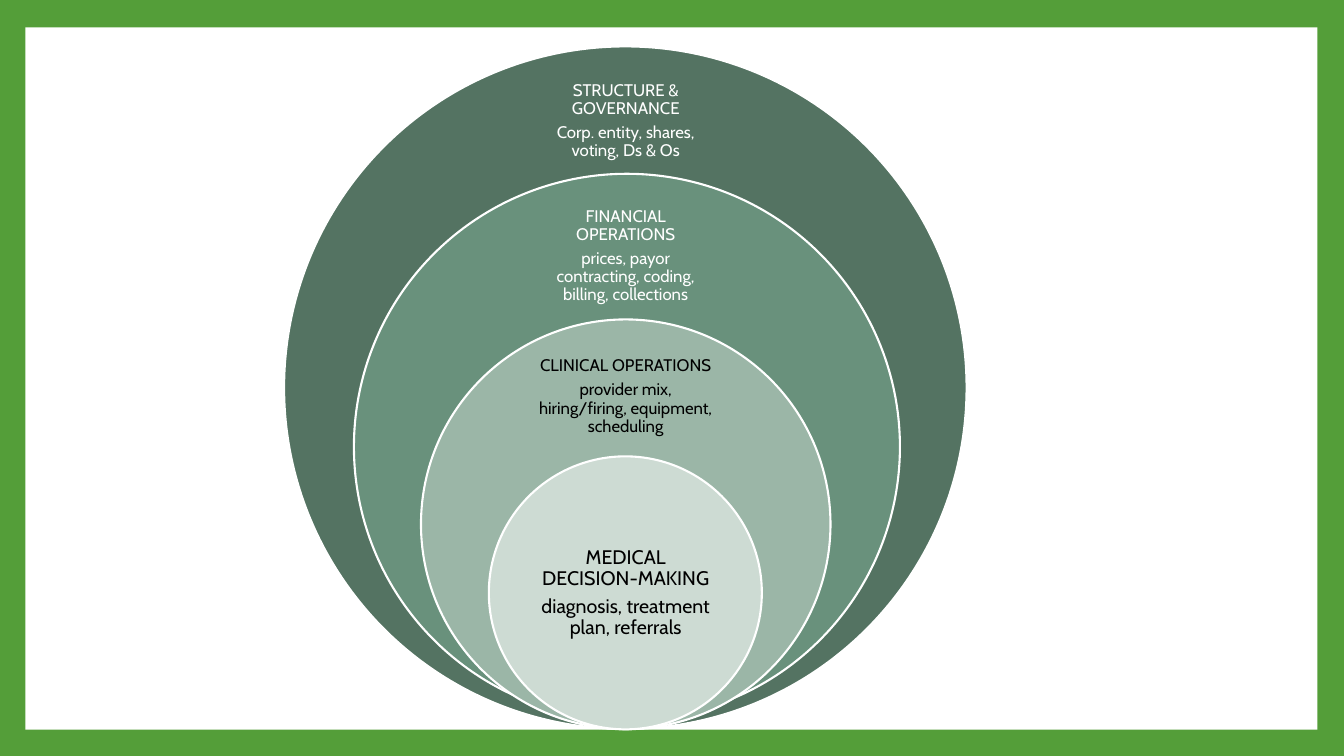
from pptx import Presentation
from pptx.dml.color import RGBColor
from pptx.enum import shapes, text
from pptx.util import Cm, Pt

COLORS = {
    "frame": "549E39",
    "white": "FFFFFF",
    "black": "000000",
    "structure": "547362",
    "financial": "69917C",
    "clinical": "9BB6A7",
    "medical": "CDDBD3",
}
OUTER_DIAMETER = 17.2
LABEL_CENTER = 15.77

# color, scale, center x, bottom, text color, size, label top, width, height, inset, lines
RINGS = [
    ("structure", 1.0, 15.76, 18.37, "white", 12, 1.76, 4.8, 2.59, 0.21,
     ["STRUCTURE & GOVERNANCE", "Corp. entity, shares, voting, Ds & Os"]),
    ("financial", 0.8, 15.8, 18.14, "white", 12, 5.21, 4.8, 2.49, 0.21,
     ["FINANCIAL OPERATIONS", "prices, payor contracting, coding, billing, collections"]),
    ("clinical", 0.6, 15.77, 18.37, "black", 12, 8.84, 4.8, 2.31, 0.21,
     ["CLINICAL OPERATIONS", "provider mix, hiring/firing, equipment, scheduling"]),
    ("medical", 0.4, 15.76, 18.38, "black", 14, 13.23, 4.88, 3.43, 0.27,
     ["MEDICAL DECISION-MAKING", "diagnosis, treatment plan, referrals"]),
]


def color(name):
    return RGBColor.from_string(COLORS[name])


def add_filled(kind, left, top, width, height, fill):
    """Add a preset shape, measured in centimetres, with a plain fill."""
    shape = slide.shapes.add_shape(kind, Cm(left), Cm(top), Cm(width), Cm(height))
    shape.shadow.inherit = False
    shape.fill.solid()
    shape.fill.fore_color.rgb = color(fill)
    return shape


presentation = Presentation()
presentation.slide_width = Cm(33.87)
presentation.slide_height = Cm(19.05)
slide = presentation.slides.add_slide(presentation.slide_layouts[6])
slide.background.fill.solid()
slide.background.fill.fore_color.rgb = color("frame")

panel = add_filled(shapes.MSO_SHAPE.RECTANGLE, 0.64, 0.69, 32.56, 17.7, "white")
panel.line.fill.background()

for fill, scale, center, bottom, ink, size, top, width, height, inset, lines in RINGS:
    diameter = OUTER_DIAMETER * scale
    ring = add_filled(shapes.MSO_SHAPE.OVAL, center - diameter / 2, bottom - diameter,
                      diameter, diameter, fill)
    ring.line.color.rgb = color("white")
    ring.line.width = Pt(1.5)

    label = slide.shapes.add_textbox(Cm(LABEL_CENTER - width / 2), Cm(top), Cm(width), Cm(height))
    frame = label.text_frame
    frame.word_wrap = True
    frame.vertical_anchor = text.MSO_ANCHOR.MIDDLE
    frame.margin_left = frame.margin_right = Cm(inset)
    frame.margin_top = frame.margin_bottom = Cm(inset)
    frame.text = "\n".join(lines)
    for paragraph in frame.paragraphs:
        paragraph.alignment = text.PP_ALIGN.CENTER
        paragraph.line_spacing = 0.9
        paragraph.space_after = Pt(0.35 * size)
        paragraph.font.name = "Cabin"
        paragraph.font.size = Pt(size)
        paragraph.font.color.rgb = color(ink)

presentation.save("out.pptx")
